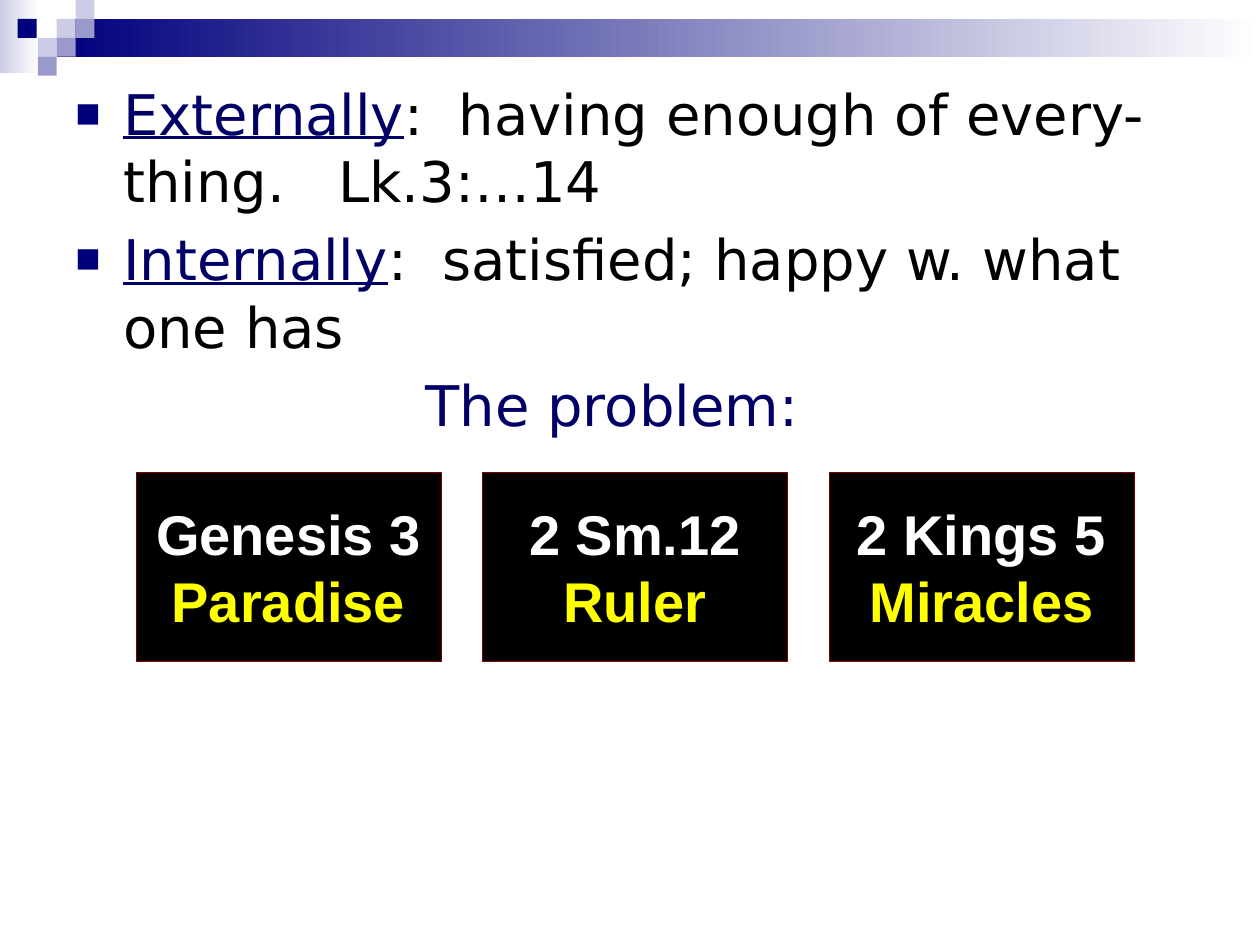
from dataclasses import dataclass

from lxml.etree import SubElement
from pptx import Presentation
from pptx.dml.color import RGBColor
from pptx.enum.shapes import MSO_SHAPE
from pptx.enum.text import MSO_ANCHOR, PP_ALIGN
from pptx.oxml.ns import qn
from pptx.slide import Slide
from pptx.util import Inches, Pt


def color(value):
    return RGBColor.from_string(value)


@dataclass
class SlideBuilder:
    slide: Slide
    navy: str = "00007D"
    heading: str = "000066"
    black: str = "000000"
    lavender: str = "CCCCE6"
    violet: str = "9999CC"
    white: str = "FFFFFF"
    yellow: str = "FFFF00"
    border: str = "800000"
    body_font: str = "DejaVu Sans"
    box_font: str = "Arial"
    text_size: int = 32

    def rectangle(self, left, top, width, height, fill):
        shape = self.slide.shapes.add_shape(
            MSO_SHAPE.RECTANGLE, Inches(left), Inches(top), Inches(width), Inches(height)
        )
        shape.shadow.inherit = False
        shape.fill.solid()
        shape.fill.fore_color.rgb = color(fill)
        shape.line.fill.background()
        return shape

    def fading_bar(self, left, top, width, height, start):
        shape = self.rectangle(left, top, width, height, start)
        shape.fill.gradient()
        shape.fill.gradient_angle = 0
        for stop, value in zip(shape.fill.gradient_stops, (start, self.white)):
            stop.color.rgb = color(value)

    def style(self, paragraph, font):
        paragraph.font.name = font
        paragraph.font.size = Pt(self.text_size)

    def run(self, paragraph, text, value, underline=None):
        run = paragraph.add_run()
        run.text = text
        run.font.color.rgb = color(value)
        run.font.underline = underline

    def bullet(self, paragraph):
        properties = paragraph._p.get_or_add_pPr()
        properties.set("marL", str(Inches(0.38)))
        properties.set("indent", str(-Inches(0.38)))
        bullet_color = SubElement(properties, qn("a:buClr"))
        SubElement(bullet_color, qn("a:srgbClr"), val=self.navy)
        SubElement(properties, qn("a:buSzPct"), val="75000")
        SubElement(properties, qn("a:buFont"), typeface=self.box_font)
        SubElement(properties, qn("a:buChar"), char="■")
        font_defaults = properties.find(qn("a:defRPr"))
        if font_defaults is not None:
            properties.append(font_defaults)

    def body(self, points, closing):
        text_box = self.slide.shapes.add_textbox(
            Inches(0.5), Inches(0.58), Inches(9), Inches(6.17)
        )
        frame = text_box.text_frame
        frame.word_wrap = True
        paragraphs = [frame.paragraphs[0]] + [frame.add_paragraph() for _ in points]
        for paragraph in paragraphs:
            paragraph.space_before = Pt(6.4)
            self.style(paragraph, self.body_font)
        for paragraph, (term, meaning) in zip(paragraphs, points):
            self.bullet(paragraph)
            self.run(paragraph, term, self.heading, True)
            self.run(paragraph, meaning, self.black)
        paragraphs[-1].alignment = PP_ALIGN.CENTER
        self.run(paragraphs[-1], closing, self.heading)

    def passage_box(self, left, passage, theme):
        shape = self.rectangle(left, 3.75, 2.42, 1.5, self.black)
        shape.line.color.rgb = color(self.border)
        shape.line.width = Pt(0.5)
        frame = shape.text_frame
        frame.word_wrap = False
        frame.vertical_anchor = MSO_ANCHOR.MIDDLE
        paragraph = frame.paragraphs[0]
        paragraph.alignment = PP_ALIGN.CENTER
        self.style(paragraph, self.box_font)
        paragraph.font.bold = True
        self.run(paragraph, passage, self.white)
        paragraph.add_line_break()
        self.run(paragraph, theme, self.yellow)


def main():
    presentation = Presentation()
    presentation.slide_width = Inches(10)
    presentation.slide_height = Inches(7.5)
    builder = SlideBuilder(presentation.slides.add_slide(presentation.slide_layouts[6]))

    builder.fading_bar(0, 0, 0.31, 0.58, builder.lavender)
    builder.fading_bar(0.45, 0.15, 9.55, 0.3, builder.navy)
    tiles = [
        (0.45, 0.15, builder.lavender),
        (0.6, 0, builder.lavender),
        (0.6, 0.15, builder.violet),
        (0.3, 0.3, builder.lavender),
        (0.14, 0.15, builder.navy),
        (0.45, 0.3, builder.violet),
        (0.3, 0.45, builder.violet),
    ]
    for left, top, fill in tiles:
        builder.rectangle(left, top, 0.15, 0.15, fill)

    points = [
        ("Externally", ":  having enough of every-thing.   Lk.3:…14"),
        ("Internally", ":  satisfied; happy w. what one has"),
    ]
    builder.body(points, "The problem:  ")

    passages = [("Genesis 3", "Paradise"), ("2 Sm.12", "Ruler"), ("2 Kings 5", "Miracles")]
    for column, (passage, theme) in enumerate(passages):
        builder.passage_box(1.08 + 2.75 * column, passage, theme)

    presentation.save("out.pptx")


if __name__ == "__main__":
    main()
